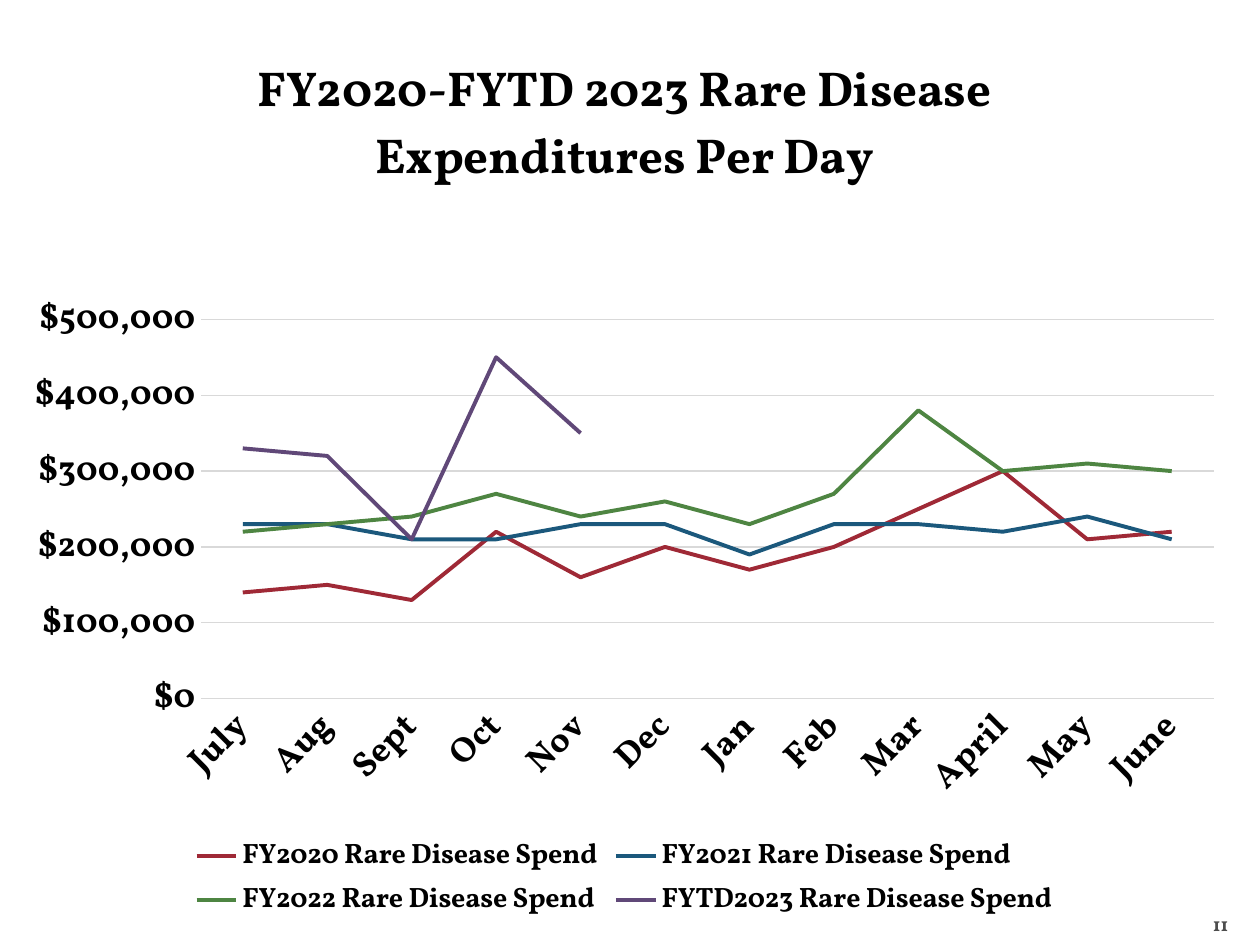
from dataclasses import dataclass

from lxml import etree
from pptx import Presentation
from pptx.chart.data import CategoryChartData
from pptx.dml.color import RGBColor
from pptx.enum import chart as charts, text
from pptx.oxml import ns
from pptx.util import Pt


@dataclass(frozen=True)
class Theme:
    font: str = "Vollkorn"
    ink: str = "000000"
    muted: str = "4D4D4D"
    grid: str = "D9D9D9"
    series: tuple = ("9F2936", "1B587C", "4E8542", "604878")
    title_size: int = 28
    axis_size: int = 20
    legend_size: int = 16
    number_size: int = 11
    grid_width: float = 0.75
    series_width: float = 2.25


MONTHS = ["July", "Aug", "Sept", "Oct", "Nov", "Dec",
          "Jan", "Feb", "Mar", "April", "May", "June"]

# Spend per day, in thousands of dollars
DAILY_SPEND = {
    "FY2020": [140, 150, 130, 220, 160, 200, 170, 200, 250, 300, 210, 220],
    "FY2021": [230, 230, 210, 210, 230, 230, 190, 230, 230, 220, 240, 210],
    "FY2022": [220, 230, 240, 270, 240, 260, 230, 270, 380, 300, 310, 300],
    "FYTD2023": [330, 320, 210, 450, 350] + [None] * 7,
}


class SlideBuilder:
    def __init__(self, slide, theme):
        self.slide = slide
        self.theme = theme

    def style_font(self, font, size, color=None):
        font.name = self.theme.font
        font.size = Pt(size)
        font.bold = True
        font.color.rgb = RGBColor.from_string(color or self.theme.ink)

    def style_line(self, line, color, width):
        line.color.rgb = RGBColor.from_string(color)
        line.width = Pt(width)

    def add_page_number(self, number, left, top, width, height):
        frame = self.slide.shapes.add_textbox(
            Pt(left), Pt(top), Pt(width), Pt(height)).text_frame
        frame.word_wrap = True
        frame.margin_left = frame.margin_right = frame.margin_bottom = 0
        frame.vertical_anchor = text.MSO_ANCHOR.BOTTOM
        frame.text = str(number)
        paragraph = frame.paragraphs[0]
        paragraph.alignment = text.PP_ALIGN.RIGHT
        self.style_font(paragraph.runs[0].font, self.theme.number_size, self.theme.muted)

    def add_line_chart(self, title, data, left, top, width, height):
        chart = self.slide.shapes.add_chart(
            charts.XL_CHART_TYPE.LINE, Pt(left), Pt(top), Pt(width), Pt(height), data).chart
        chart.font.name = self.theme.font
        chart.font.size = Pt(10)
        self.set_title(chart, title)
        self.set_axes(chart)
        self.set_legend(chart)
        chart.plots[0].vary_by_categories = False
        for series, color in zip(chart.plots[0].series, self.theme.series):
            series.smooth = False
            self.style_line(series.format.line, color, self.theme.series_width)
        return chart

    def set_title(self, chart, title):
        chart.has_title = True
        chart.chart_title.include_in_layout = False
        frame = chart.chart_title.text_frame
        frame.text = title
        self.style_font(frame.paragraphs[0].runs[0].font, self.theme.title_size)

    def set_axes(self, chart):
        months, dollars = chart.category_axis, chart.value_axis
        for axis in (months, dollars):
            axis.major_tick_mark = axis.minor_tick_mark = charts.XL_TICK_MARK.NONE
            self.style_font(axis.tick_labels.font, self.theme.axis_size)
        slant = months._element.find(ns.qn("c:txPr")).find(ns.qn("a:bodyPr"))
        slant.set("rot", str(-45 * 60000))
        self.style_line(months.format.line, self.theme.grid, self.theme.grid_width)
        dollars.minimum_scale, dollars.maximum_scale = 0, 500000
        dollars.major_unit = 100000
        dollars.format.line.fill.background()
        dollars.has_major_gridlines = True
        self.style_line(dollars.major_gridlines.format.line,
                        self.theme.grid, self.theme.grid_width)
        dollars.tick_labels.number_format = '"$"#,##0'
        dollars.tick_labels.number_format_is_linked = False

    def set_legend(self, chart):
        chart.has_legend = True
        chart.legend.position = charts.XL_LEGEND_POSITION.BOTTOM
        chart.legend.include_in_layout = False
        self.style_font(chart.legend.font, self.theme.legend_size)

    def place_plot(self, chart, x, y, w, h):
        """Fix the inner plot area, in fractions of the chart."""
        area = chart._chartSpace.find(".//" + ns.qn("c:plotArea"))
        for old in area.findall(ns.qn("c:layout")):
            area.remove(old)
        layout = etree.Element(ns.qn("c:layout"))
        manual = etree.SubElement(layout, ns.qn("c:manualLayout"))
        settings = {"layoutTarget": "inner", "xMode": "edge", "yMode": "edge",
                    "x": x, "y": y, "w": w, "h": h}
        for tag, value in settings.items():
            etree.SubElement(manual, ns.qn("c:" + tag)).set("val", str(value))
        area.insert(0, layout)


def main():
    deck = Presentation()
    deck.slide_width, deck.slide_height = Pt(720), Pt(540)
    builder = SlideBuilder(deck.slides.add_slide(deck.slide_layouts[6]), Theme())

    spend = CategoryChartData(number_format='"$"#,##0')
    spend.categories = MONTHS
    for year, thousands in DAILY_SPEND.items():
        spend.add_series(f"{year} Rare Disease Spend",
                         [None if v is None else v * 1000 for v in thousands])

    builder.add_page_number(11, 666, 505.5, 36, 28.8)
    chart = builder.add_line_chart("FY2020-FYTD 2023 Rare Disease Expenditures Per Day",
                                   spend, 5.8, 12.2, 702, 516.2)
    builder.place_plot(chart, 0.155, 0.33, 0.825, 0.42)
    deck.save("out.pptx")


if __name__ == "__main__":
    main()
